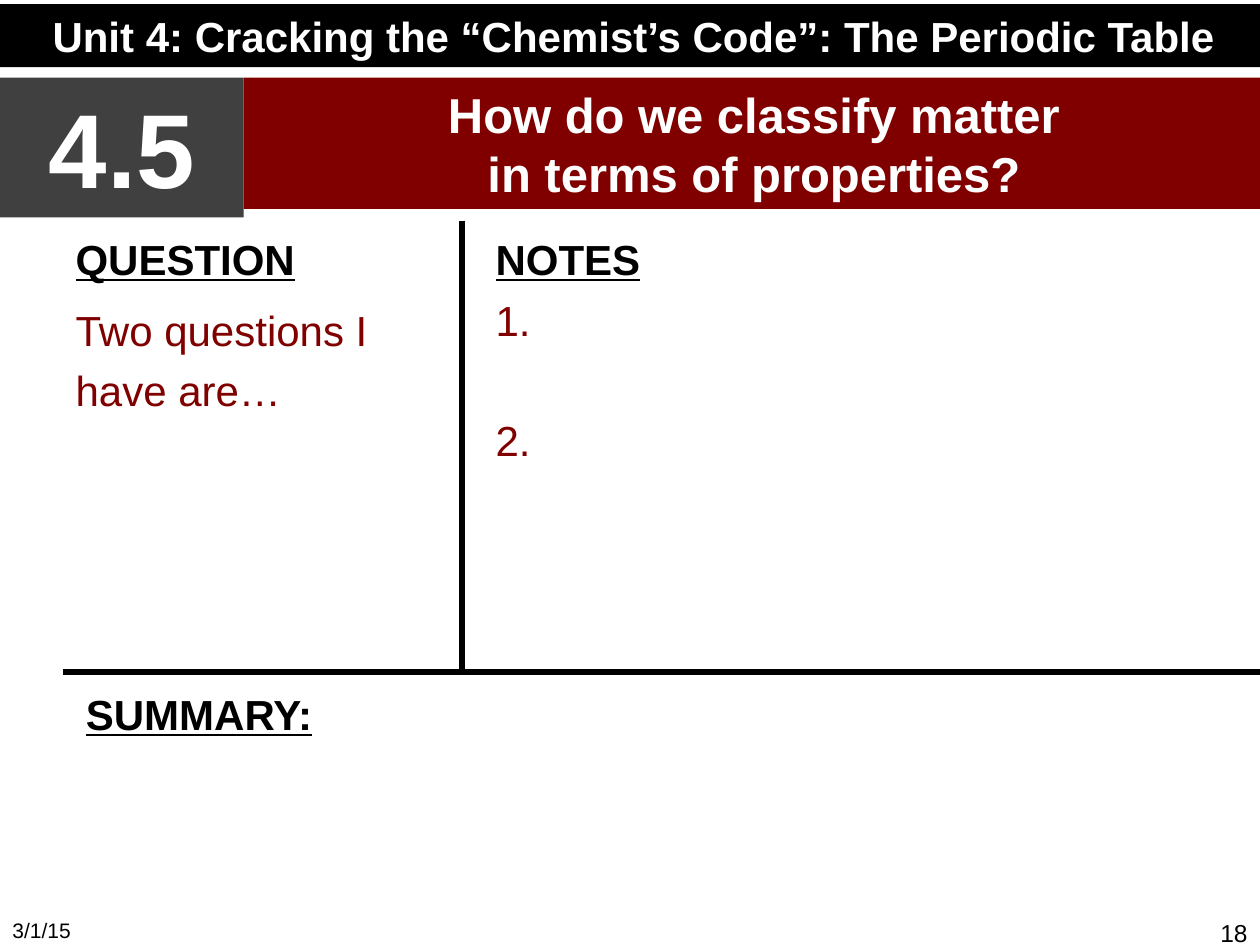
import dataclasses
import typing

import lxml.etree
import pptx
import pptx.dml.color
import pptx.enum.shapes
import pptx.enum.text
import pptx.oxml.ns
import pptx.util

COLUMNS, ROWS = 60, 45
ALIGN = pptx.enum.text.PP_ALIGN
ANCHOR = pptx.enum.text.MSO_ANCHOR


@dataclasses.dataclass(frozen=True)
class Theme:
    font: str = "Arial"
    black: str = "000000"
    white: str = "FFFFFF"
    gray: str = "404040"
    maroon: str = "800000"
    date: int = 12
    page: int = 14
    text: int = 24
    title: int = 28
    number: int = 60
    rule: int = 3
    gap: int = 6


THEME = Theme()


@dataclasses.dataclass(frozen=True)
class Area:
    column: float
    row: float
    columns: float
    rows: float


@dataclasses.dataclass(frozen=True)
class Line:
    text: str
    size: int = THEME.text
    color: str = THEME.black
    bold: bool = False
    underline: bool = False
    format: dict[str, typing.Any] = dataclasses.field(default_factory=dict)


@dataclasses.dataclass(frozen=True)
class Panel:
    area: Area
    lines: list[Line]
    fill: str | None = None
    anchor: typing.Any = ANCHOR.TOP


def across(columns: float) -> int:
    return round(presentation.slide_width * columns / COLUMNS)


def down(rows: float) -> int:
    return round(presentation.slide_height * rows / ROWS)


def place(area: Area) -> dict[str, int]:
    return {"left": across(area.column), "top": down(area.row),
            "width": across(area.columns), "height": down(area.rows)}


def apply(target: typing.Any, values: dict[str, typing.Any]) -> None:
    for name, value in values.items():
        setattr(target, name, value)


def rgb(color: str) -> pptx.dml.color.RGBColor:
    return pptx.dml.color.RGBColor.from_string(color)


def heading(text: str) -> Line:
    return Line(text, bold=True, underline=True)


def banner(text: str, size: int) -> Line:
    return Line(text, size, THEME.white, True, format={"alignment": ALIGN.CENTER})


def prompt(text: str, gap: float = THEME.gap, spacing: float = 1.0) -> Line:
    return Line(text, color=THEME.maroon,
                format={"space_before": pptx.util.Pt(gap), "line_spacing": spacing})


def write(shape: typing.Any, panel: Panel) -> None:
    frame = shape.text_frame
    apply(frame, {"word_wrap": True, "vertical_anchor": panel.anchor,
                  "auto_size": pptx.enum.text.MSO_AUTO_SIZE.NONE})
    for index, line in enumerate(panel.lines):
        paragraph = frame.add_paragraph() if index else frame.paragraphs[0]
        paragraph.text = line.text
        properties = paragraph._p.get_or_add_pPr()
        properties.set("marL", "0")
        properties.set("indent", "0")
        lxml.etree.SubElement(properties, pptx.oxml.ns.qn("a:buNone"))
        apply(paragraph, {"alignment": ALIGN.LEFT,
                          "space_before": pptx.util.Pt(0)} | line.format)
        apply(paragraph.font, {"name": THEME.font, "size": pptx.util.Pt(line.size),
                               "bold": line.bold, "underline": line.underline})
        paragraph.font.color.rgb = rgb(line.color)


def paint(shape: typing.Any, panel: Panel) -> None:
    if panel.fill:
        shape.fill.solid()
        shape.fill.fore_color.rgb = rgb(panel.fill)
        shape.line.fill.background()
    write(shape, panel)


def fill_placeholder(placeholder: typing.Any, panel: Panel) -> None:
    apply(placeholder, place(panel.area))
    paint(placeholder, panel)


def add_panel(panel: Panel) -> None:
    bounds = place(panel.area)
    if panel.fill:
        shape = slide.shapes.add_shape(
            pptx.enum.shapes.MSO_SHAPE.RECTANGLE, **bounds)
        shape.shadow.inherit = False
    else:
        shape = slide.shapes.add_textbox(**bounds)
    paint(shape, panel)


def add_rule(start: tuple[float, float], end: tuple[float, float]) -> None:
    connector = slide.shapes.add_connector(
        pptx.enum.shapes.MSO_CONNECTOR.STRAIGHT,
        across(start[0]), down(start[1]), across(end[0]), down(end[1]))
    connector.line.color.rgb = rgb(THEME.black)
    connector.line.width = pptx.util.Pt(THEME.rule)
    lxml.etree.SubElement(connector._element.spPr, pptx.oxml.ns.qn("a:effectLst"))


presentation = pptx.Presentation()
presentation.slide_width = pptx.util.Inches(10)
presentation.slide_height = pptx.util.Inches(7.5)
slide = presentation.slides.add_slide(
    presentation.slide_layouts.get_by_name("Two Content"))

title = Panel(Area(11.6, 3.7, 48.6, 6.25),
              [banner("How do we classify matter", THEME.title),
               banner("in terms of properties?", THEME.title)],
              THEME.maroon, ANCHOR.MIDDLE)
question = Panel(Area(3, 10.8, 19, 20.7),
                 [heading("QUESTION"),
                  prompt("Two questions I have are…", spacing=1.2)])
notes = Panel(Area(23, 10.8, 37, 20.7),
              [heading("NOTES"), prompt("1."), prompt("2.", gap=40)])
for placeholder, panel in zip(slide.placeholders, (title, question, notes)):
    fill_placeholder(placeholder, panel)

panels = [
    Panel(Area(0, 0.2, 60.35, 3),
          [banner("Unit 4: Cracking the “Chemist’s Code”: The Periodic Table", THEME.text)],
          THEME.black),
    Panel(Area(0, 3.7, 11.6, 6.65), [banner("4.5", THEME.number)], THEME.gray),
    Panel(Area(3.5, 32.5, 56.5, 12.5), [heading("SUMMARY:")]),
    Panel(Area(0, 43.4, 14, 1.6), [Line("3/1/15", THEME.date)]),
    Panel(Area(46, 43.4, 14, 1.6),
          [Line("18", THEME.page, format={"alignment": ALIGN.RIGHT})]),
]
for panel in panels:
    add_panel(panel)

add_rule((22, 10.5), (22, 32))
add_rule((60, 32), (3, 32))

presentation.save("out.pptx")
